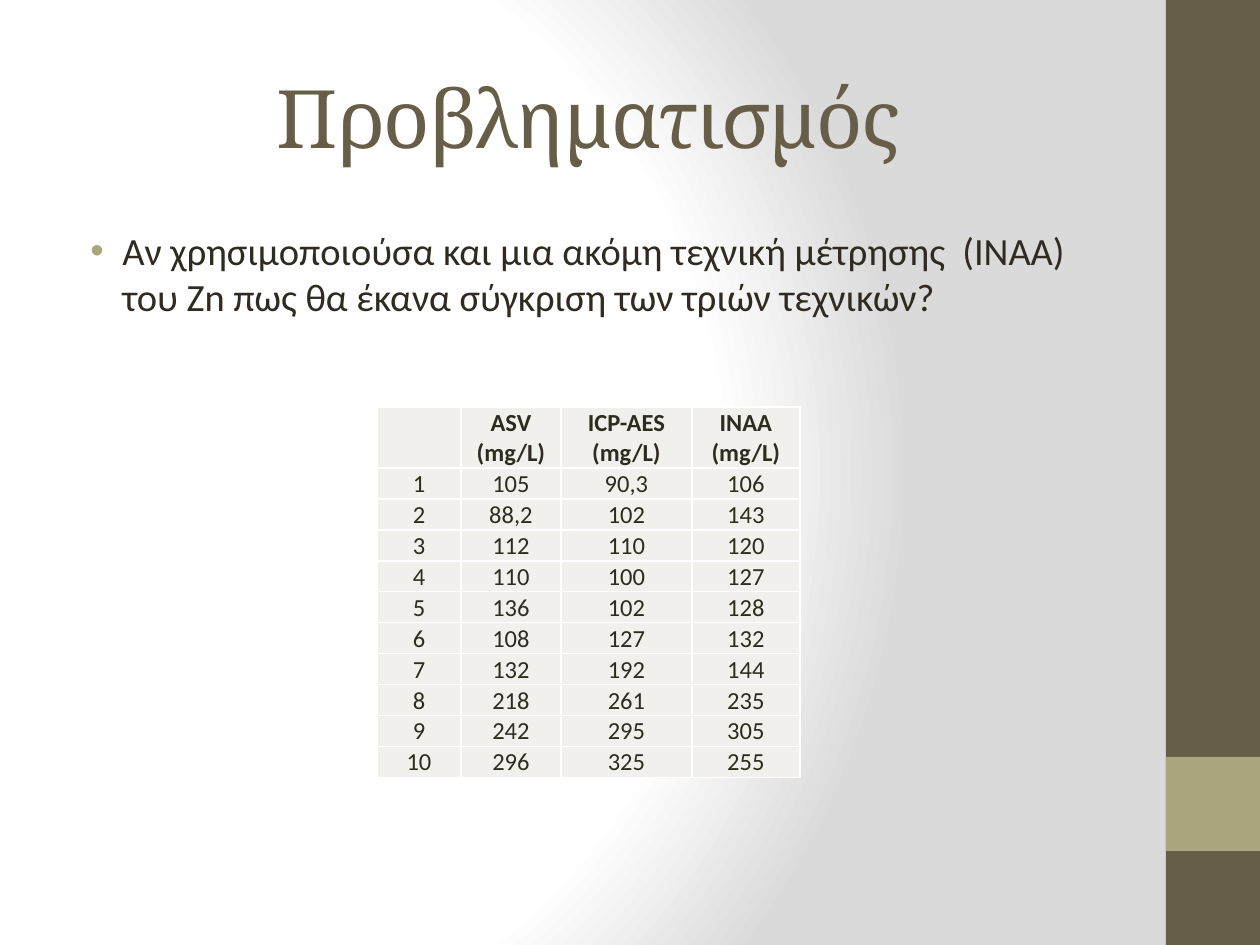
import lxml.etree
import pptx
import pptx.dml.color
import pptx.enum.shapes
import pptx.enum.text
import pptx.oxml
import pptx.oxml.ns
import pptx.util

PX = 914400 // 126
COLORS = {
    "brown": "675E47",
    "olive": "A9A57C",
    "text": "2F2B20",
    "cell": "F1F0EC",
    "white": "FFFFFF",
    "gray": "DADADA",
}
TITLE = "Προβληματισμός"
QUESTION = ("Αν χρησιμοποιούσα και μια ακόμη τεχνική μέτρησης  (ΙΝΑΑ) "
            "του Zn πως θα έκανα σύγκριση των τριών τεχνικών?")
MEASUREMENTS = {
    "ASV (mg/L)": "105 88,2 112 110 136 108 132 218 242 296".split(),
    "ICP-AES (mg/L)": "90,3 102 110 100 102 127 192 261 295 325".split(),
    "INAA (mg/L)": "106 143 120 127 128 132 144 235 305 255".split(),
}
COLUMN_WIDTHS = [84, 100, 131, 108]
HEADER_HEIGHT = 61
ROW_HEIGHT = 31


def rgb(name):
    return pptx.dml.color.RGBColor.from_string(COLORS[name])


def format_runs(paragraph, size, font_name, color, bold=False):
    for run in paragraph.runs:
        run.font.size = pptx.util.Pt(size)
        run.font.name = font_name
        run.font.bold = bold
        run.font.color.rgb = rgb(color)


def add_background(slide):
    stops = "".join(
        f'<a:gs pos="{position * 1000}"><a:srgbClr val="{COLORS[name]}"/></a:gs>'
        for position, name in [(0, "white"), (75, "white"), (100, "gray")])
    background = pptx.oxml.parse_xml(
        f'<p:bg {pptx.oxml.ns.nsdecls("p", "a")}><p:bgPr>'
        f'<a:gradFill rotWithShape="1"><a:gsLst>{stops}</a:gsLst>'
        '<a:path path="circle">'
        '<a:fillToRect l="20000" t="50000" r="100000" b="50000"/></a:path>'
        '</a:gradFill><a:effectLst/></p:bgPr></p:bg>')
    slide.element.cSld.insert(0, background)


def add_sidebar(slide, left, top, width, height):
    # Full band, then a square accent one square above the bottom
    bands = [(top, height, "brown"), (top + height - 2 * width + 0, width, "olive")]
    for band_top, band_height, color in bands:
        shape = slide.shapes.add_shape(
            pptx.enum.shapes.MSO_SHAPE.RECTANGLE,
            left * PX, band_top * PX, width * PX, band_height * PX)
        shape.shadow.inherit = False
        shape.fill.solid()
        shape.fill.fore_color.rgb = rgb(color)
        shape.line.fill.background()


def add_text(slide, left, top, width, height, text):
    shape = slide.shapes.add_textbox(left * PX, top * PX, width * PX, height * PX)
    shape.text_frame.word_wrap = True
    shape.text_frame.text = text
    return shape.text_frame


def add_title(slide, left, top, width, height):
    text_frame = add_text(slide, left, top, width, height, TITLE)
    text_frame.vertical_anchor = pptx.enum.text.MSO_ANCHOR.MIDDLE
    paragraph = text_frame.paragraphs[0]
    paragraph.alignment = pptx.enum.text.PP_ALIGN.CENTER
    format_runs(paragraph, 46, "Cambria", "brown")
    # Slightly tightened letter spacing
    paragraph.runs[0].font._element.set("spc", "-100")


def add_question(slide, left, top, width, height):
    text_frame = add_text(slide, left, top, width, height, QUESTION)
    paragraph = text_frame.paragraphs[0]
    # Hanging bullet
    properties = paragraph._p.get_or_add_pPr()
    properties.set("marL", str(47 * PX))
    properties.set("indent", str(-32 * PX))
    bullet_color = lxml.etree.SubElement(properties, pptx.oxml.ns.qn("a:buClr"))
    lxml.etree.SubElement(
        bullet_color, pptx.oxml.ns.qn("a:srgbClr"), val=COLORS["olive"])
    lxml.etree.SubElement(properties, pptx.oxml.ns.qn("a:buFont"), typeface="Arial")
    lxml.etree.SubElement(properties, pptx.oxml.ns.qn("a:buChar"), char="•")
    format_runs(paragraph, 22, "Calibri", "text")


def set_borders(cell):
    properties = cell._tc.get_or_add_tcPr()
    for index, side in enumerate(("lnL", "lnR", "lnT", "lnB")):
        properties.insert(index, pptx.oxml.parse_xml(
            f'<a:{side} {pptx.oxml.ns.nsdecls("a")} w="12700"><a:solidFill>'
            f'<a:srgbClr val="{COLORS["white"]}"/></a:solidFill></a:{side}>'))


def fill_cell(cell, text, bold):
    cell.margin_left = cell.margin_right = cell.margin_top = PX
    cell.margin_bottom = 0
    cell.vertical_anchor = pptx.enum.text.MSO_ANCHOR.MIDDLE
    cell.fill.solid()
    cell.fill.fore_color.rgb = rgb("cell")
    set_borders(cell)
    cell.text_frame.text = text
    paragraph = cell.text_frame.paragraphs[0]
    paragraph.alignment = pptx.enum.text.PP_ALIGN.CENTER
    paragraph.font.size = pptx.util.Pt(14)
    format_runs(paragraph, 14, "Calibri", "text", bold)


def add_measurements(slide, left, top):
    samples = zip(*MEASUREMENTS.values())
    rows = [["", *MEASUREMENTS]]
    rows += [[str(number), *values] for number, values in enumerate(samples, 1)]
    heights = [HEADER_HEIGHT] + [ROW_HEIGHT] * (len(rows) - 1)
    table = slide.shapes.add_table(
        len(rows), len(COLUMN_WIDTHS), left * PX, top * PX,
        sum(COLUMN_WIDTHS) * PX, sum(heights) * PX).table
    table.first_row = table.horz_banding = False
    for column, width in zip(table.columns, COLUMN_WIDTHS):
        column.width = width * PX
    for row_index, (row, height) in enumerate(zip(rows, heights)):
        table.rows[row_index].height = height * PX
        for column_index, text in enumerate(row):
            fill_cell(table.cell(row_index, column_index), text, row_index == 0)


def main():
    presentation = pptx.Presentation()
    presentation.slide_width = pptx.util.Inches(10)
    presentation.slide_height = pptx.util.Inches(7.5)
    slide = presentation.slides.add_slide(presentation.slide_layouts[6])
    add_background(slide)
    add_sidebar(slide, 1166, 0, 94, 945)
    add_title(slide, 63, 38, 1050, 157)
    add_question(slide, 63, 221, 1050, 661)
    add_measurements(slide, 377, 407)
    presentation.save("out.pptx")


if __name__ == "__main__":
    main()
